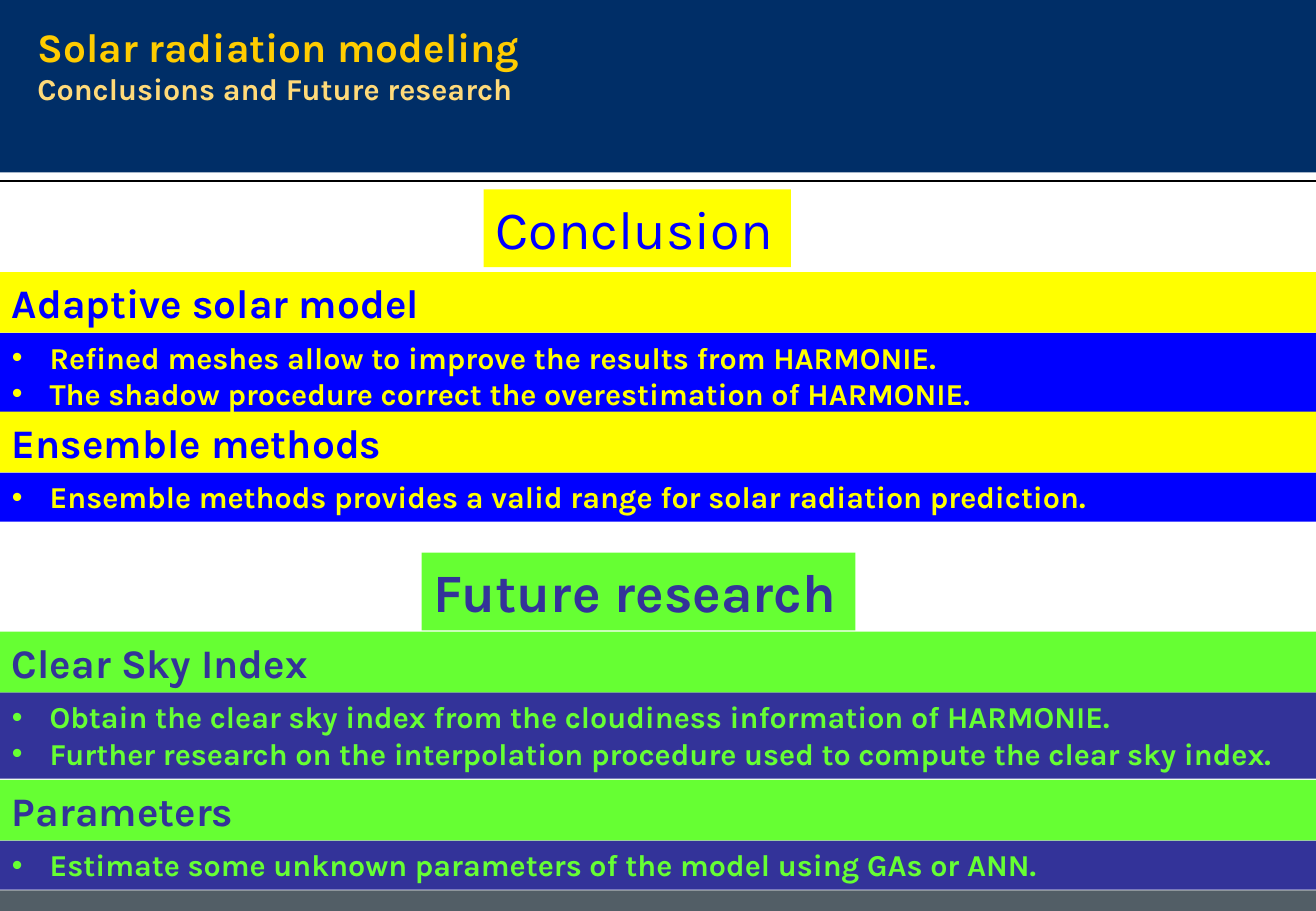
from lxml.etree import SubElement
from pptx import Presentation
from pptx.dml.color import RGBColor
from pptx.enum.shapes import MSO_CONNECTOR, MSO_SHAPE
from pptx.enum.text import MSO_ANCHOR, MSO_AUTO_SIZE, PP_ALIGN
from pptx.oxml.ns import qn
from pptx.util import Inches, Pt

COLORS = {
    "navy": "002E67", "slate": "525E66", "black": "000000",
    "gold": "FFCC00", "sand": "FFDA79", "yellow": "FFFF00",
    "blue": "0000FF", "green": "66FF33", "indigo": "333399",
}
FONT = "Karla"
WIDTH, HEIGHT = 10.83, 7.5

deck = Presentation()
deck.slide_width, deck.slide_height = Inches(WIDTH), Inches(HEIGHT)
slide = deck.slides.add_slide(deck.slide_layouts[6])


def add_band(left, top, width, height, fill):
    band = slide.shapes.add_shape(
        MSO_SHAPE.RECTANGLE, Inches(left), Inches(top), Inches(width), Inches(height))
    band.shadow.inherit = False
    band.fill.solid()
    band.fill.fore_color.rgb = RGBColor.from_string(COLORS[fill])
    band.line.fill.background()
    return band


def write_lines(band, lines, size, color, bold=True, bulleted=False):
    """Fill a band with one left-aligned paragraph per line."""
    frame = band.text_frame
    frame.word_wrap = True
    frame.auto_size = MSO_AUTO_SIZE.SHAPE_TO_FIT_TEXT
    frame.vertical_anchor = MSO_ANCHOR.TOP
    for index, line in enumerate(lines):
        para = frame.add_paragraph() if index else frame.paragraphs[0]
        para.text = line
        para.alignment = PP_ALIGN.LEFT
        if bulleted:
            properties = para._p.get_or_add_pPr()
            properties.set("marL", str(Inches(0.31)))
            properties.set("indent", str(Inches(-0.31)))
            SubElement(properties, qn("a:buFont"), typeface="Arial")
            SubElement(properties, qn("a:buChar"), char="•")
        para.font.name = FONT
        para.font.size = Pt(size)
        para.font.bold = bold
        para.font.color.rgb = RGBColor.from_string(COLORS[color])


# Page frame
add_band(0, 0, WIDTH, 1.42, "navy")
rule = slide.shapes.add_connector(
    MSO_CONNECTOR.STRAIGHT, Inches(0), Inches(1.49), Inches(WIDTH), Inches(1.49))
rule.line.color.rgb = RGBColor.from_string(COLORS["black"])
rule.line.width = Pt(0.75)
SubElement(rule._element.spPr, qn("a:effectLst"))
add_band(0, 7.33, WIDTH, 0.17, "slate")

# Title and subtitle
title = slide.shapes.add_textbox(Inches(0.21), Inches(0.13), Inches(5.04), Inches(0.79))
title.text_frame.word_wrap = False
para = title.text_frame.paragraphs[0]
para.font.name = FONT
para.font.bold = True
for text, size, color in [("Solar radiation modeling", 24, "gold"),
                          ("Conclusions and Future research", 18, "sand")]:
    if para.runs:
        para.add_line_break()
    span = para.add_run()
    span.text = text
    span.font.size = Pt(size)
    span.font.color.rgb = RGBColor.from_string(COLORS[color])

# Section labels: text, left, top, width, fill, text color, bold
labels = [
    ("Conclusion", 3.98, 1.56, 2.53, "yellow", "blue", False),
    ("Future research", 3.47, 4.55, 3.57, "green", "indigo", True),
]
for text, left, top, width, fill, color, bold in labels:
    write_lines(add_band(left, top, width, 0.64, fill), [text], 32, color, bold)

# Topics: heading, top, light color, dark color, bullets
topics = [
    ("Adaptive solar model", 2.24, "yellow", "blue",
     ["Refined meshes allow to improve the results from HARMONIE.",
      "The shadow procedure correct the overestimation of HARMONIE."]),
    ("Ensemble methods", 3.39, "yellow", "blue",
     ["Ensemble methods provides a valid range for solar radiation prediction."]),
    ("Clear Sky Index", 5.2, "green", "indigo",
     ["Obtain the clear sky index from the cloudiness information of HARMONIE.",
      "Further research on the interpolation procedure used to compute the clear sky index."]),
    ("Parameters", 6.42, "green", "indigo",
     ["Estimate some unknown parameters of the model using GAs or ANN."]),
]
HEADING_HEIGHT = 0.5
for heading, top, light, dark, bullets in topics:
    body_height = 0.1 + 0.305 * len(bullets)
    body = add_band(0, top + HEADING_HEIGHT, WIDTH, body_height, dark)
    write_lines(body, bullets, 18, light, bulleted=True)
    write_lines(add_band(0, top, WIDTH, HEADING_HEIGHT, light), [heading], 24, dark)

deck.save("out.pptx")
